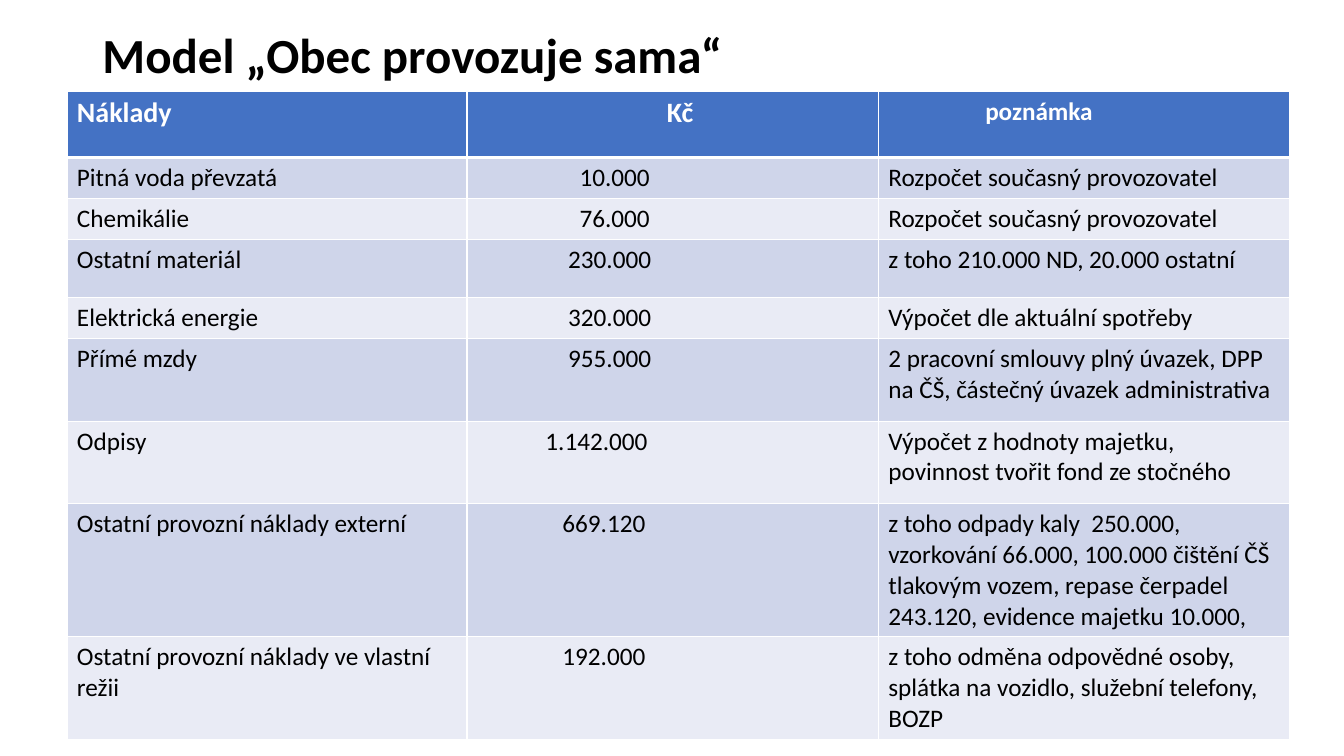
"""Build a slide with the cost table of a municipality running its own sewerage."""
from lxml import etree
from pptx import Presentation
from pptx.dml.color import RGBColor
from pptx.enum.text import MSO_ANCHOR, MSO_AUTO_SIZE, PP_ALIGN
from pptx.oxml.ns import qn
from pptx.util import Pt

LEFT = PP_ALIGN.LEFT
TOP = MSO_ANCHOR.TOP
MIDDLE = MSO_ANCHOR.MIDDLE
NO_AUTOFIT = MSO_AUTO_SIZE.NONE
TITLE_ONLY = 5

BLACK = RGBColor(0x00, 0x00, 0x00)
WHITE = RGBColor(0xFF, 0xFF, 0xFF)
HEADER_BLUE = RGBColor(0x44, 0x72, 0xC4)
BAND_DARK = RGBColor(0xCF, 0xD5, 0xEA)
BAND_LIGHT = RGBColor(0xE9, 0xEB, 0xF5)

CELL_MARGIN = 7.2
COLUMN_WIDTHS = (285.8, 293.8, 293.8)
HEADER = (("Náklady", 20, 0), ("Kč", 20, 135.6), ("poznámka", 18, 69.2))
HEADER_HEIGHT = 47.5
COSTS = (
    ("Pitná voda převzatá", "10.000", 73.2, "Rozpočet současný provozovatel", 27.4),
    ("Chemikálie", "76.000", 73.2, "Rozpočet současný provozovatel", 27.4),
    ("Ostatní materiál", "230.000", 65.1, "z toho 210.000 ND, 20.000 ostatní", 41.8),
    ("Elektrická energie", "320.000", 65.1, "Výpočet dle aktuální spotřeby", 27.4),
    ("Přímé mzdy", "955.000", 65.1,
     "2 pracovní smlouvy plný úvazek, DPP na ČŠ, částečný úvazek administrativa", 59),
    ("Odpisy", "1.142.000", 48.8,
     "Výpočet z hodnoty majetku, povinnost tvořit fond ze stočného", 59),
    ("Ostatní provozní náklady externí", "669.120", 61,
     "z toho odpady kaly  250.000, vzorkování 66.000, 100.000 čištění ČŠ tlakovým vozem, "
     "repase čerpadel 243.120, evidence majetku 10.000,", 94.3),
    ("Ostatní provozní náklady ve vlastní režii", "192.000", 61,
     "z toho odměna odpovědné osoby, splátka na vozidlo, služební telefony, BOZP", 68.4),
)


def write_text(frame, text, *, font, size=18, color=BLACK, bold=False, spacing=1.0):
    frame.word_wrap = True
    paragraph = frame.paragraphs[0]
    paragraph.alignment = LEFT
    paragraph.line_spacing = spacing
    run = paragraph.add_run()
    run.text = text
    run.font.name = font
    run.font.size = Pt(size)
    run.font.bold = bold
    run.font.color.rgb = color


class SlideBuilder:
    def __init__(self, slide, font):
        self.slide = slide
        self.font = font

    def title(self, text, left, top, width, height):
        shape = self.slide.shapes.title
        shape.left, shape.top = Pt(left), Pt(top)
        shape.width, shape.height = Pt(width), Pt(height)
        frame = shape.text_frame
        frame.auto_size = NO_AUTOFIT
        frame.vertical_anchor = MIDDLE
        write_text(frame, text, font=self.font, size=35, bold=True, spacing=0.9)

    def borders(self, cell, **widths):
        properties = cell._tc.get_or_add_tcPr()
        for position, side in enumerate("LRTB"):
            line = etree.Element(qn(f"a:ln{side}"), w=str(Pt(widths.get(side, 1))))
            fill = etree.SubElement(line, qn("a:solidFill"))
            etree.SubElement(fill, qn("a:srgbClr"), val=str(WHITE))
            properties.insert(position, line)

    def cell(self, cell, text, fill, indent=0, **text_format):
        cell.fill.solid()
        cell.fill.fore_color.rgb = fill
        cell.margin_left = Pt(CELL_MARGIN + indent)
        cell.vertical_anchor = TOP
        write_text(cell.text_frame, text, font=self.font, **text_format)

    def cost_table(self, left, top):
        heights = (HEADER_HEIGHT, *(cost[-1] for cost in COSTS))
        table = self.slide.shapes.add_table(
            len(heights), len(COLUMN_WIDTHS), Pt(left), Pt(top),
            Pt(sum(COLUMN_WIDTHS)), Pt(sum(heights))).table
        for column, width in zip(table.columns, COLUMN_WIDTHS):
            column.width = Pt(width)
        for row, height in zip(table.rows, heights):
            row.height = Pt(height)
        for cell, (text, size, indent) in zip(table.rows[0].cells, HEADER):
            self.cell(cell, text, HEADER_BLUE, indent, size=size, color=WHITE, bold=True)
            self.borders(cell, B=3)
        for index, (name, amount, indent, note, _) in enumerate(COSTS, start=1):
            fill = BAND_DARK if index % 2 else BAND_LIGHT
            contents = ((name, 0), (amount, indent), (note, 0))
            for cell, (text, offset) in zip(table.rows[index].cells, contents):
                self.cell(cell, text, fill, offset)
                self.borders(cell, T=3 if index == 1 else 1)


def main():
    presentation = Presentation()
    presentation.slide_width, presentation.slide_height = Pt(960), Pt(540)
    slide = presentation.slides.add_slide(presentation.slide_layouts[TITLE_ONLY])
    builder = SlideBuilder(slide, "Calibri")
    builder.title("Model „Obec provozuje sama“", 66, 28.8, 828, 24.5)
    builder.cost_table(47.8, 65)
    presentation.save("out.pptx")


if __name__ == "__main__":
    main()
